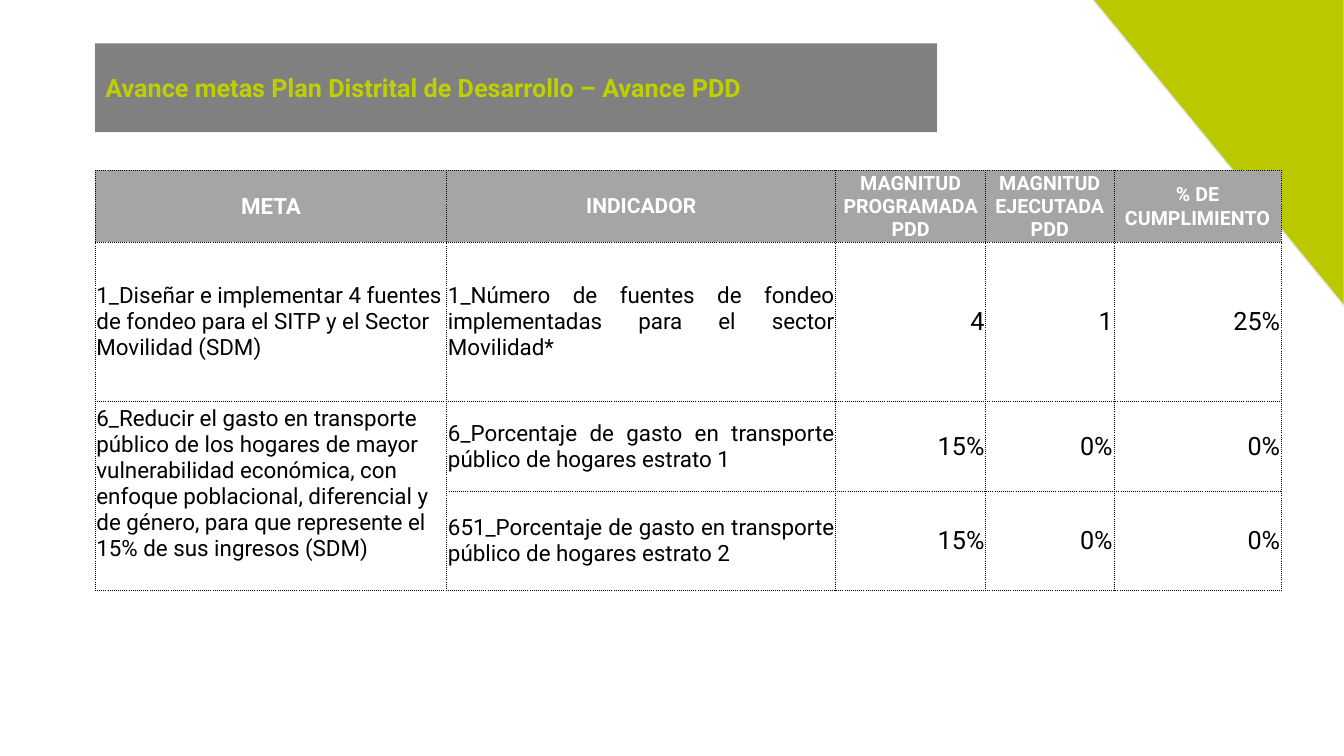
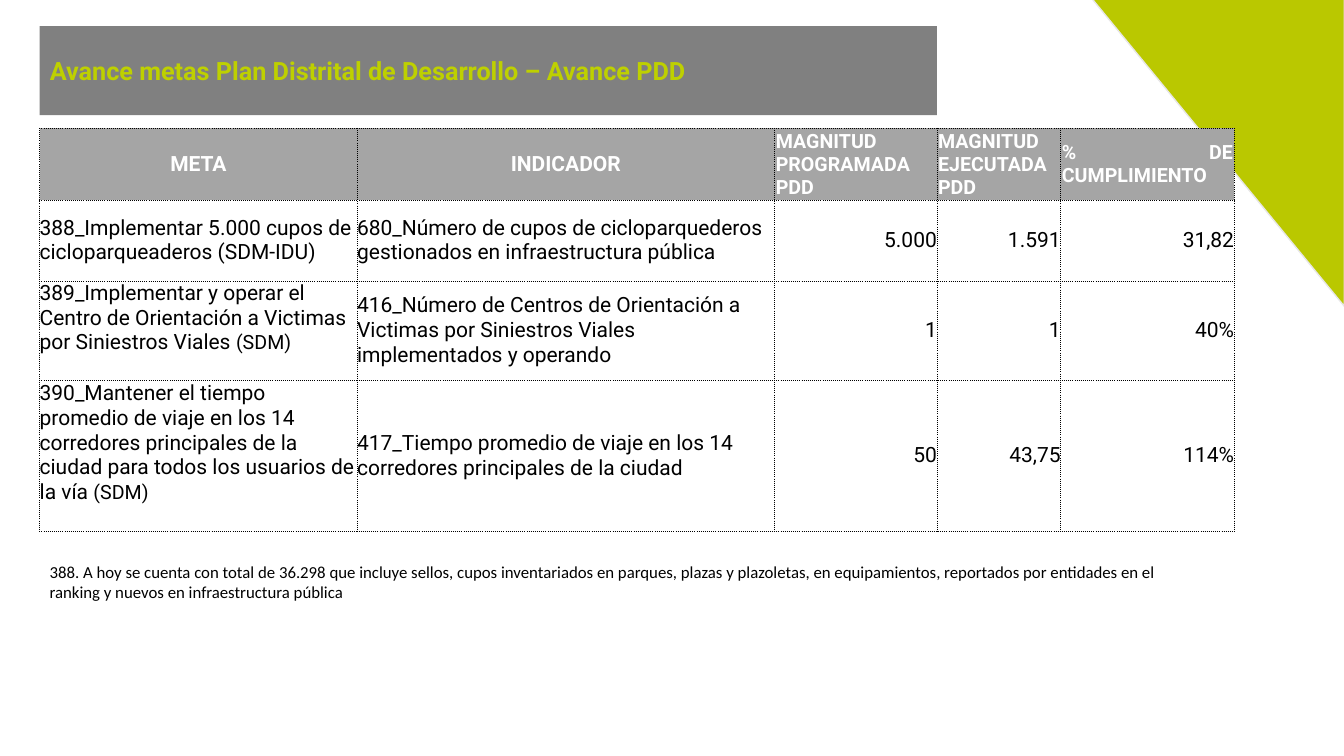
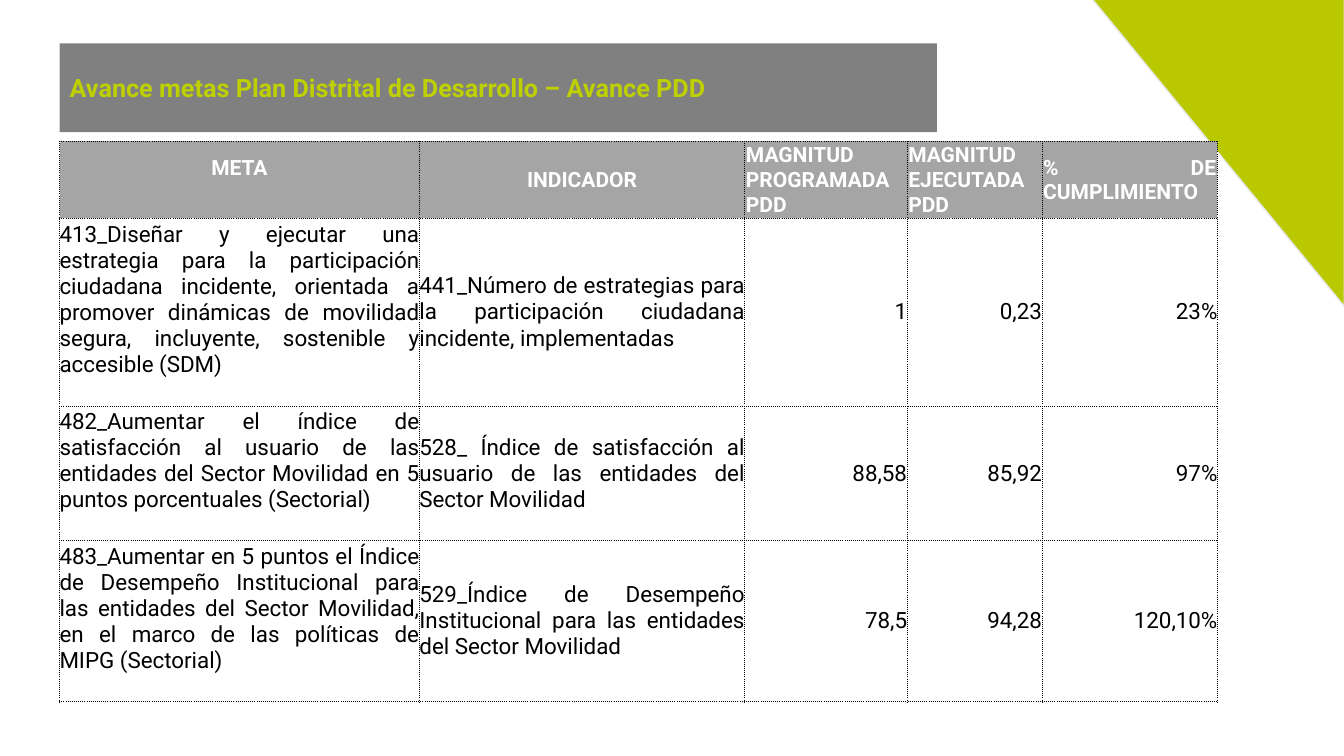
from dataclasses import dataclass, field

from lxml.etree import SubElement
from pptx import Presentation
from pptx.dml.color import RGBColor
from pptx.enum.shapes import MSO_SHAPE
from pptx.enum.text import MSO_ANCHOR, MSO_AUTO_SIZE, PP_ALIGN
from pptx.oxml.ns import qn
from pptx.util import Cm, Pt

COLORS = {
    "lime": "BAC800",
    "title_text": "BED000",
    "title_band": "808080",
    "header": "A5A5A5",
    "corner_line": "E7E6E6",
    "white": "FFFFFF",
    "black": "000000",
}
FONT = "Roboto"
TITLE = "Avance metas Plan Distrital de Desarrollo – Avance PDD"
HEADINGS = ["META", "INDICADOR", "MAGNITUD PROGRAMADA PDD",
            "MAGNITUD EJECUTADA PDD", "% DE CUMPLIMIENTO"]
BAND_RIGHT, BAND_HEIGHT = 23.61, 2.24
HEADER_INSET = 0.03
RAISED_TEXT_INSET = 0.63
LEFT, CENTER, RIGHT, JUSTIFY = (
    PP_ALIGN.LEFT, PP_ALIGN.CENTER, PP_ALIGN.RIGHT, PP_ALIGN.JUSTIFY)


@dataclass
class Progress:
    """One slide of goals; a goal of None continues the goal above it."""
    left: float
    band_top: float
    table_top: float
    widths: list
    heights: list
    goals: list
    header_sizes: list
    body_sizes: list
    header_aligns: list
    body_aligns: list
    body_inset: float = 0
    raised_rows: set = field(default_factory=set)
    note: str = ""


SLIDES = [
    Progress(
        left=2.4, band_top=1.09, table_top=4.29,
        widths=[8.86, 9.8, 3.78, 3.23, 4.22],
        heights=[1.81, 4.01, 2.27, 2.49],
        header_sizes=[16, 15, 14, 14, 14],
        body_sizes=[16, 16, 18, 18, 18],
        header_aligns=[CENTER] * 5,
        body_aligns=[LEFT, JUSTIFY] + [RIGHT] * 3,
        body_inset=HEADER_INSET, raised_rows={2},
        goals=[
            ["1_Diseñar e implementar 4 fuentes de fondeo para el SITP y el "
             "Sector Movilidad (SDM)",
             "1_Número de fuentes de fondeo implementadas para el sector "
             "Movilidad*", "4", "1", "25%"],
            ["6_Reducir el gasto en transporte público de los hogares de mayor "
             "vulnerabilidad económica, con enfoque poblacional, diferencial y "
             "de género, para que represente el 15% de sus ingresos (SDM)",
             "6_Porcentaje de gasto en transporte público de hogares estrato 1",
             "15%", "0%", "0%"],
            [None,
             "651_Porcentaje de gasto en transporte público de hogares estrato 2",
             "15%", "0%", "0%"],
        ]),
    Progress(
        left=1, band_top=0.66, table_top=3.23,
        widths=[8, 10.52, 4.09, 3.12, 4.37],
        heights=[1.81, 2.04, 2.49, 3.81],
        header_sizes=[15, 15, 14, 14, 14],
        body_sizes=[15] * 5,
        header_aligns=[CENTER] * 2 + [JUSTIFY] * 3,
        body_aligns=[LEFT] * 2 + [RIGHT] * 3,
        raised_rows={2, 3},
        goals=[
            ["388_Implementar 5.000 cupos de cicloparqueaderos (SDM-IDU)",
             "680_Número de cupos de cicloparquederos gestionados en "
             "infraestructura pública", "5.000", "1.591", "31,82"],
            [[("389_Implementar y operar el Centro de Orientación a Victimas "
               "por Siniestros Viales ", 15), ("(SDM)", 14)],
             "416_Número de Centros de Orientación a Victimas por Siniestros "
             "Viales implementados y operando", "1", "1", "40%"],
            [[("390_Mantener el tiempo promedio de viaje en los 14 corredores "
               "principales de la ciudad para todos los usuarios de la vía ", 15),
              ("(SDM)", 14)],
             "417_Tiempo promedio de viaje en los 14 corredores principales de "
             "la ciudad", "50", "43,75", "114%"],
        ],
        note="388. A hoy se cuenta con total de 36.298 que incluye sellos, cupos "
             "inventariados en parques, plazas y plazoletas, en equipamientos, "
             "reportados por entidades en el ranking y nuevos en "
             "infraestructura pública"),
    Progress(
        left=1.5, band_top=1.09, table_top=3.56,
        widths=[9.07, 8.2, 4.09, 3.4, 4.42],
        heights=[1.94, 4.74, 3.38, 4.06],
        header_sizes=[15] * 5,
        body_sizes=[16] * 5,
        header_aligns=[CENTER] * 2 + [JUSTIFY] * 3,
        body_aligns=[JUSTIFY] * 2 + [RIGHT] * 3,
        raised_rows={0, 1, 2, 3},
        goals=[
            ["413_Diseñar y ejecutar una estrategia para la participación "
             "ciudadana incidente, orientada a promover dinámicas de movilidad "
             "segura, incluyente, sostenible y accesible (SDM)",
             "441_Número de estrategias para la participación ciudadana "
             "incidente, implementadas", "1", "0,23", "23%"],
            ["482_Aumentar el índice de satisfacción al usuario de las entidades "
             "del Sector Movilidad en 5 puntos porcentuales (Sectorial)",
             "528_ Índice de satisfacción al usuario de las entidades del Sector "
             "Movilidad", "88,58", "85,92", "97%"],
            ["483_Aumentar en 5 puntos el Índice de Desempeño Institucional para "
             "las entidades del Sector Movilidad, en el marco de las políticas "
             "de MIPG (Sectorial)",
             "529_Índice de Desempeño Institucional para las entidades del "
             "Sector Movilidad", "78,5", "94,28", "120,10%"],
        ]),
]


def rgb(name):
    return RGBColor.from_string(COLORS[name])


def add_run(paragraph, text, size, color, bold=False, font=FONT):
    run = paragraph.add_run()
    run.text = text
    run.font.name = font
    run.font.size = Pt(size)
    run.font.bold = bold
    run.font.color.rgb = rgb(color)


def add_corner(slide):
    corner = slide.shapes.add_shape(MSO_SHAPE.RIGHT_TRIANGLE, Cm(27.48),
                                    Cm(-0.08), Cm(6.4), Cm(7.8))
    corner.rotation = 180
    corner.shadow.inherit = False
    corner.fill.solid()
    corner.fill.fore_color.rgb = rgb("lime")
    corner.line.color.rgb = rgb("corner_line")
    corner.line.width = Pt(1)


def fill_title_band(slide, left, top):
    band = slide.shapes.title
    band.left, band.top = Cm(left), Cm(top)
    band.width, band.height = Cm(BAND_RIGHT - left), Cm(BAND_HEIGHT)
    band.fill.solid()
    band.fill.fore_color.rgb = rgb("title_band")
    frame = band.text_frame
    frame.auto_size = MSO_AUTO_SIZE.NONE
    frame.vertical_anchor = MSO_ANCHOR.MIDDLE
    frame.paragraphs[0].alignment = LEFT
    add_run(frame.paragraphs[0], TITLE, 18, "title_text", bold=True)


def add_dotted_borders(cell):
    properties = cell._tc.get_or_add_tcPr()
    for position, side in enumerate(("lnL", "lnR", "lnT", "lnB")):
        line = SubElement(properties, qn(f"a:{side}"), w=str(Pt(0.5)))
        solid = SubElement(line, qn("a:solidFill"))
        SubElement(solid, qn("a:srgbClr"), val=COLORS["black"])
        SubElement(line, qn("a:prstDash"), val="sysDot")
        properties.insert(position, line)


def format_cell(cell, content, size, align, inset, is_header, is_raised):
    """Content is a string, or a list of (text, size) runs."""
    cell.vertical_anchor = MSO_ANCHOR.MIDDLE
    cell.margin_left = cell.margin_right = cell.margin_top = Cm(inset)
    cell.margin_bottom = Cm(RAISED_TEXT_INSET if is_raised else 0)
    if is_header:
        cell.fill.solid()
        cell.fill.fore_color.rgb = rgb("header")
    else:
        cell.fill.background()
    add_dotted_borders(cell)
    if content is None:
        return
    paragraph = cell.text_frame.paragraphs[0]
    paragraph.alignment = align
    runs = [(content, size)] if isinstance(content, str) else content
    for text, run_size in runs:
        add_run(paragraph, text, run_size,
                "white" if is_header else "black", bold=is_header)


def add_goals_table(slide, progress):
    rows = [HEADINGS] + progress.goals
    table = slide.shapes.add_table(
        len(rows), len(HEADINGS), Cm(progress.left), Cm(progress.table_top),
        Cm(sum(progress.widths)), Cm(sum(progress.heights))).table
    table.first_row = table.horz_banding = False
    for column, width in zip(table.columns, progress.widths):
        column.width = Cm(width)
    for row, height in zip(table.rows, progress.heights):
        row.height = Cm(height)
    for r, contents in enumerate(rows):
        is_header = r == 0
        sizes = progress.header_sizes if is_header else progress.body_sizes
        aligns = progress.header_aligns if is_header else progress.body_aligns
        inset = HEADER_INSET if is_header else progress.body_inset
        for c, content in enumerate(contents):
            format_cell(table.cell(r, c), content, sizes[c], aligns[c], inset,
                        is_header, c == 0 and r in progress.raised_rows)
        if contents[0] is None:
            table.cell(r - 1, 0).merge(table.cell(r, 0))


def add_note(slide, text, left, top):
    note = slide.shapes.add_textbox(Cm(left), Cm(top), Cm(28.4), Cm(1.28))
    note.text_frame.word_wrap = True
    note.text_frame.auto_size = MSO_AUTO_SIZE.SHAPE_TO_FIT_TEXT
    add_run(note.text_frame.paragraphs[0], text, 12, "black", font="Calibri")


def add_progress_slide(deck, progress):
    slide = deck.slides.add_slide(deck.slide_layouts.get_by_name("Title Only"))
    add_corner(slide)
    fill_title_band(slide, progress.left, progress.band_top)
    add_goals_table(slide, progress)
    if progress.note:
        table_bottom = progress.table_top + sum(progress.heights)
        add_note(slide, progress.note, progress.left, table_bottom + 0.64)


def main():
    deck = Presentation()
    deck.slide_width, deck.slide_height = Cm(33.87), Cm(19.05)
    for progress in SLIDES:
        add_progress_slide(deck, progress)
    deck.save("out.pptx")


if __name__ == "__main__":
    main()
